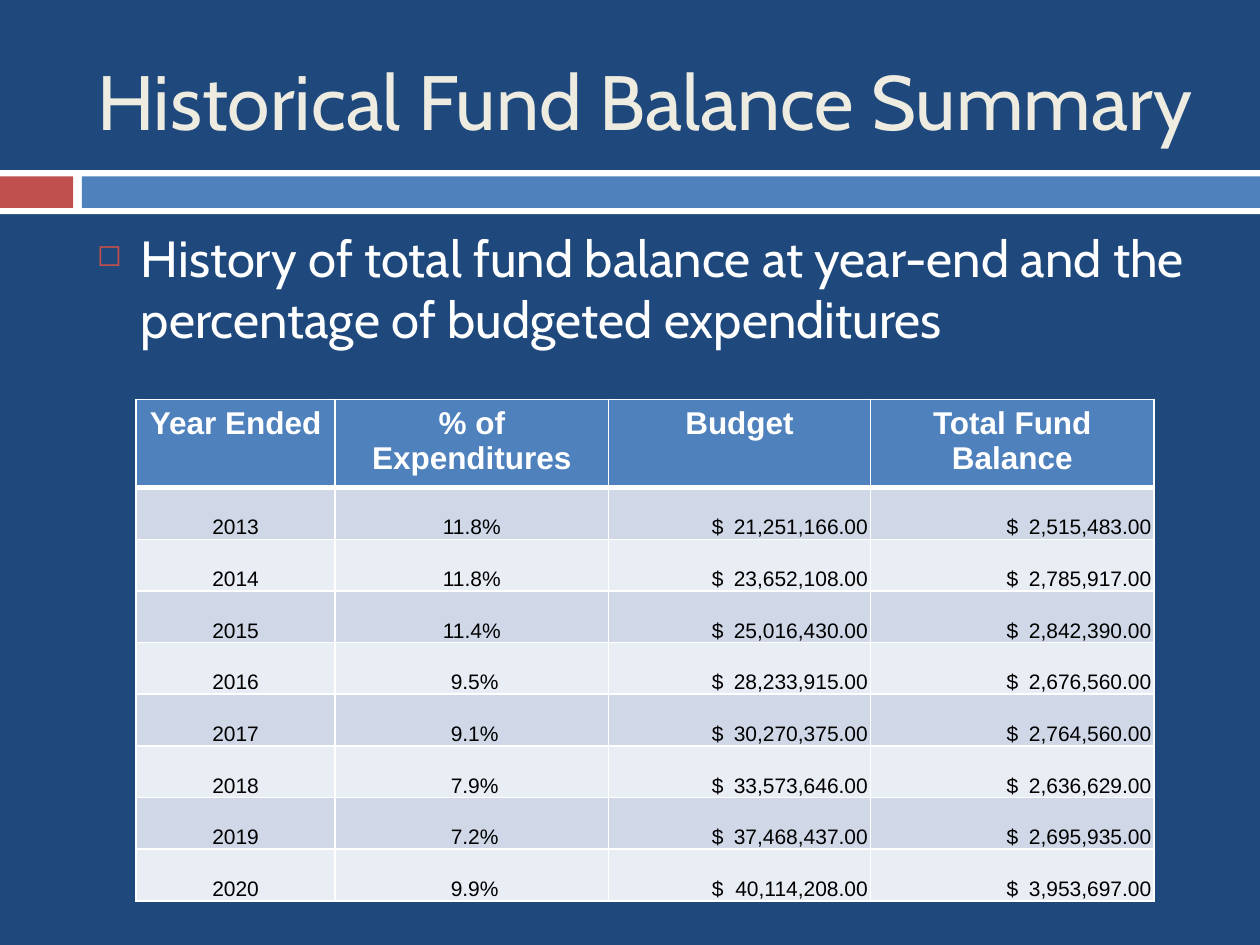
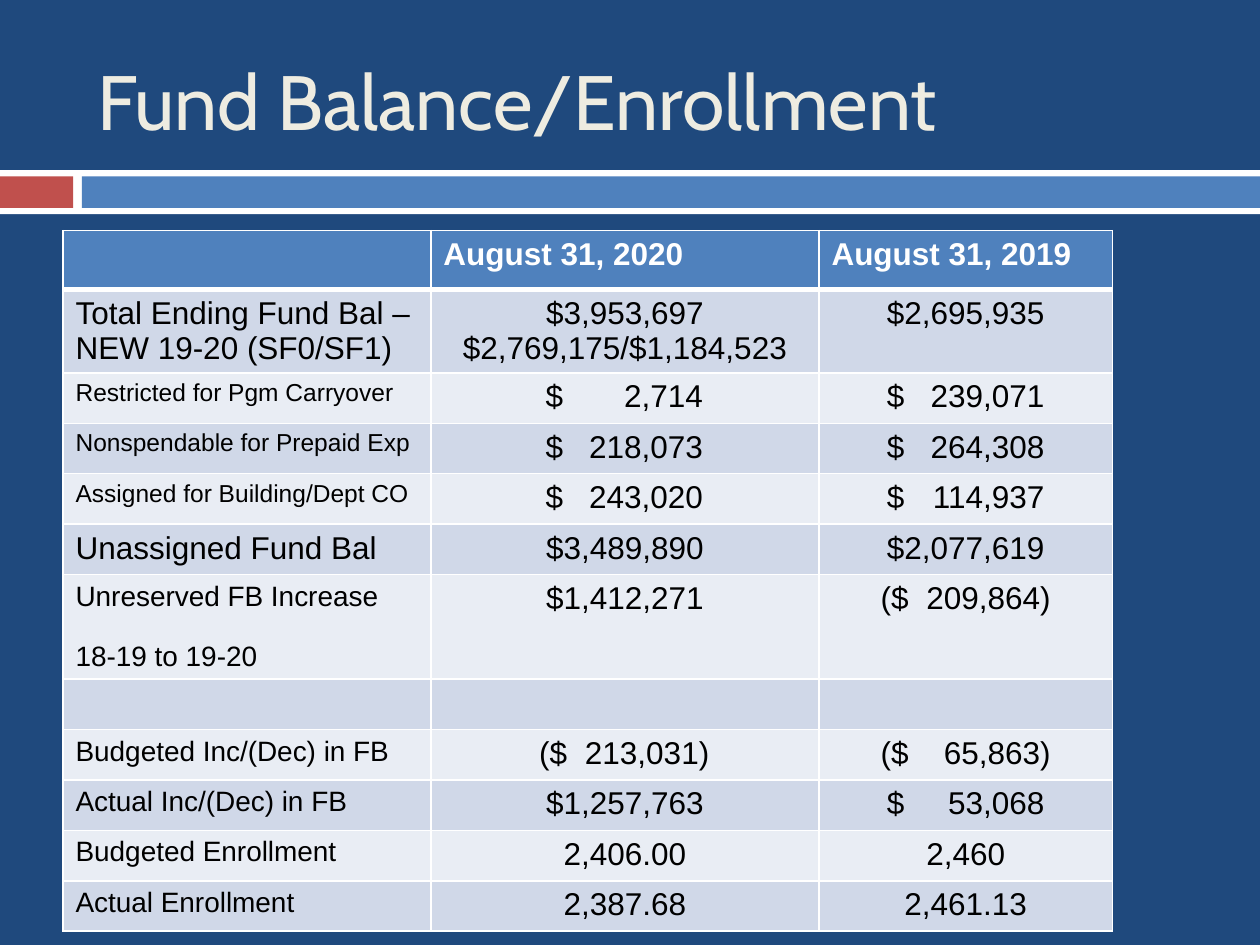
from lxml.etree import SubElement
from pptx import Presentation
from pptx.dml.color import RGBColor
from pptx.enum.shapes import MSO_SHAPE
from pptx.enum.text import MSO_ANCHOR, MSO_AUTO_SIZE, PP_ALIGN
from pptx.oxml.ns import qn
from pptx.util import Inches, Pt

# Shared look
NAVY, BLUE, RED, WHITE = "1F497D", "4F81BD", "C0504D", "FFFFFF"
CREAM, BLACK = "EEECE1", "000000"
ROW_FILLS = ("D0D8E8", "E9EDF4")
HEADING_FONT, TABLE_FONT = "Cabin", "Arial"
BANDS = [
    (0, 1.35, 10, 0.35, WHITE),
    (0, 1.4, 0.58, 0.25, RED),
    (0.65, 1.4, 9.35, 0.25, BLUE),
]

# Year, share of expenditures, budget, total fund balance
HISTORY = [
    ("2013", "11.8%", "21,251,166", "2,515,483"),
    ("2014", "11.8%", "23,652,108", "2,785,917"),
    ("2015", "11.4%", "25,016,430", "2,842,390"),
    ("2016", " 9.5%", "28,233,915", "2,676,560"),
    ("2017", " 9.1%", "30,270,375", "2,764,560"),
    ("2018", " 7.9%", "33,573,646", "2,636,629"),
    ("2019", " 7.2%", "37,468,437", "2,695,935"),
    ("2020", " 9.9%", "40,114,208", "3,953,697"),
]
# Label, label size, row height, 2020 value, 2019 value
ENROLLMENT = [
    ("Total Ending Fund Bal – NEW 19-20 (SF0/SF1)", 18, 0.6,
     "$3,953,697\n$2,769,175/$1,184,523", "$2,695,935"),
    ("Restricted for Pgm Carryover", 14, 0.4, "$\t2,714", "$\t239,071"),
    ("Nonspendable for Prepaid Exp", 14, 0.4, "$\t218,073", "$\t264,308"),
    ("Assigned for Building/Dept CO", 14, 0.4, "$\t243,020", "$\t114,937"),
    ("Unassigned Fund Bal", 18, 0.4, "$3,489,890", "$2,077,619"),
    ("Unreserved FB Increase\n18-19 to 19-20", 16, 0.63, "$1,412,271", "($\t209,864)"),
    ("", 18, 0.4, "", ""),
    ("Budgeted Inc/(Dec) in FB", 16, 0.4, "($\t213,031)", "($\t65,863)"),
    ("Actual Inc/(Dec) in FB", 16, 0.4, "$1,257,763", "$\t53,068"),
    ("Budgeted Enrollment", 16, 0.4, "2,406.00", "2,460"),
    ("Actual Enrollment", 16, 0.4, "2,387.68", "2,461.13"),
]


def rgb(value):
    return RGBColor.from_string(value)


def apply(target, values):
    for name, value in values.items():
        setattr(target, name, value)


def write(frame, text, size, color, font=TABLE_FONT, bold=False, align=PP_ALIGN.LEFT):
    frame.text = text
    for paragraph in frame.paragraphs:
        paragraph.alignment = align
        apply(paragraph.font, {"size": Pt(size), "name": font, "bold": bold})
        paragraph.font.color.rgb = rgb(color)
        for run in paragraph.runs:
            apply(run.font, {"size": Pt(size), "name": font, "bold": bold})
            run.font.color.rgb = rgb(color)


def add_band(slide, left, top, width, height, color):
    band = slide.shapes.add_shape(
        MSO_SHAPE.RECTANGLE, Inches(left), Inches(top), Inches(width), Inches(height))
    band.shadow.inherit = False
    band.fill.solid()
    band.fill.fore_color.rgb = rgb(color)
    band.line.fill.background()


def add_titled_slide(prs, heading):
    slide = prs.slides.add_slide(prs.slide_layouts[5])
    for band in BANDS:
        add_band(slide, *band)
    title = slide.shapes.title
    apply(title, {"left": Inches(0.67), "top": Inches(0.25),
                  "width": Inches(8.92), "height": Inches(1.08)})
    apply(title.text_frame, {"word_wrap": True, "auto_size": MSO_AUTO_SIZE.NONE,
                             "vertical_anchor": MSO_ANCHOR.MIDDLE})
    write(title.text_frame, heading, 44, CREAM, HEADING_FONT)
    return slide


def add_bullet(slide, text):
    statement = slide.shapes.add_textbox(
        Inches(0.67), Inches(1.75), Inches(8.92), Inches(1.2))
    statement.text_frame.word_wrap = True
    write(statement.text_frame, text, 29, WHITE, HEADING_FONT)
    paragraph = statement.text_frame.paragraphs[0]
    paragraph.space_before = Pt(7)
    props = paragraph._p.get_or_add_pPr()
    props.set("marL", str(Inches(0.35)))
    props.set("indent", str(-Inches(0.35)))
    color = SubElement(props, qn("a:buClr"))
    SubElement(color, qn("a:srgbClr"), val=RED)
    SubElement(props, qn("a:buSzPct"), val="60000")
    SubElement(props, qn("a:buChar"), char="◻")


def add_borders(cell, top=1, bottom=1):
    props = cell._tc.get_or_add_tcPr()
    for side, width in (("L", 1), ("R", 1), ("T", top), ("B", bottom)):
        edge = SubElement(props, qn(f"a:ln{side}"), w=str(Pt(width)))
        fill = SubElement(edge, qn("a:solidFill"))
        SubElement(fill, qn("a:srgbClr"), val=WHITE)


def add_grid(slide, left, top, widths, heights):
    """Add a bordered table with a blue header and alternating row fills."""
    frame = slide.shapes.add_table(
        len(heights), len(widths), Inches(left), Inches(top),
        Inches(sum(widths)), Inches(sum(heights)))
    grid = frame.table
    for column, width in zip(grid.columns, widths):
        column.width = Inches(width)
    for index, (row, height) in enumerate(zip(grid.rows, heights)):
        row.height = Inches(height)
        for cell in row.cells:
            add_borders(cell, top=3 if index == 1 else 1, bottom=3 if index == 0 else 1)
            cell.fill.solid()
            cell.fill.fore_color.rgb = rgb(ROW_FILLS[(index - 1) % 2] if index else BLUE)
    return grid


def write_header(grid, labels, align):
    for cell, label in zip(grid.rows[0].cells, labels):
        write(cell.text_frame, label, 18, WHITE, bold=True, align=align)


def write_amount(cell, text, size, start, span):
    """Put the currency sign at start and end the digits span inches further on."""
    write(cell.text_frame, text, size, BLACK)
    apply(cell, {"margin_left": Inches(start), "margin_right": Inches(0.01)})
    props = cell.text_frame.paragraphs[0]._p.get_or_add_pPr()
    stops = SubElement(props, qn("a:tabLst"))
    SubElement(stops, qn("a:tab"), pos=str(Inches(span)), algn="r")


def build_history(prs):
    slide = add_titled_slide(prs, "Historical Fund Balance Summary")
    add_bullet(slide, "History of total fund balance at year-end and the "
                      "percentage of budgeted expenditures")
    grid = add_grid(slide, 1.08, 3.17, [1.58, 2.17, 2.08, 2.25],
                    [0.43] + [0.41] * len(HISTORY))
    write_header(grid, ["Year Ended", "% of Expenditures", "Budget", "Total Fund Balance"],
                 PP_ALIGN.CENTER)
    tight = {"vertical_anchor": MSO_ANCHOR.BOTTOM, "margin_left": Inches(0.01),
             "margin_right": Inches(0.01), "margin_top": Inches(0.01), "margin_bottom": 0}
    for index, (year, share, budget, balance) in enumerate(HISTORY, 1):
        cells = list(grid.rows[index].cells)
        for cell in cells:
            apply(cell, tight)
        for cell, text in zip(cells, (year, share)):
            write(cell.text_frame, text, 12, BLACK, align=PP_ALIGN.CENTER)
        write_amount(cells[2], f"$\t{budget}.00", 12, 0.82, 1.24)
        write_amount(cells[3], f"$\t{balance}.00", 12, 1.08, 1.15)


def build_enrollment(prs):
    slide = add_titled_slide(prs, "Fund Balance/Enrollment")
    grid = add_grid(slide, 0.5, 1.83, [2.92, 3.08, 2.33],
                    [0.47] + [row[2] for row in ENROLLMENT])
    write_header(grid, ["", "August 31, 2020", "August 31, 2019"], PP_ALIGN.LEFT)
    for index, (label, size, _, *values) in enumerate(ENROLLMENT, 1):
        label_cell, *value_cells = grid.rows[index].cells
        write(label_cell.text_frame, label, size, BLACK)
        for paragraph in label_cell.text_frame.paragraphs[1:]:
            paragraph.space_before = Pt(17)
        for cell, text, start in zip(value_cells, values, (0.91, 0.54)):
            if "\t" in text:
                # Brackets hang outside the aligned amounts
                hang = 0.05 if text.startswith("(") else 0
                write_amount(cell, text, 18, start - hang, 1.25 + 2 * hang)
            else:
                write(cell.text_frame, text, 18, BLACK, align=PP_ALIGN.CENTER)


def main():
    prs = Presentation()
    apply(prs, {"slide_width": Inches(10), "slide_height": Inches(7.5)})
    backdrop = prs.slide_master.background.fill
    backdrop.solid()
    backdrop.fore_color.rgb = rgb(NAVY)
    build_history(prs)
    build_enrollment(prs)
    prs.save("out.pptx")


if __name__ == "__main__":
    main()
